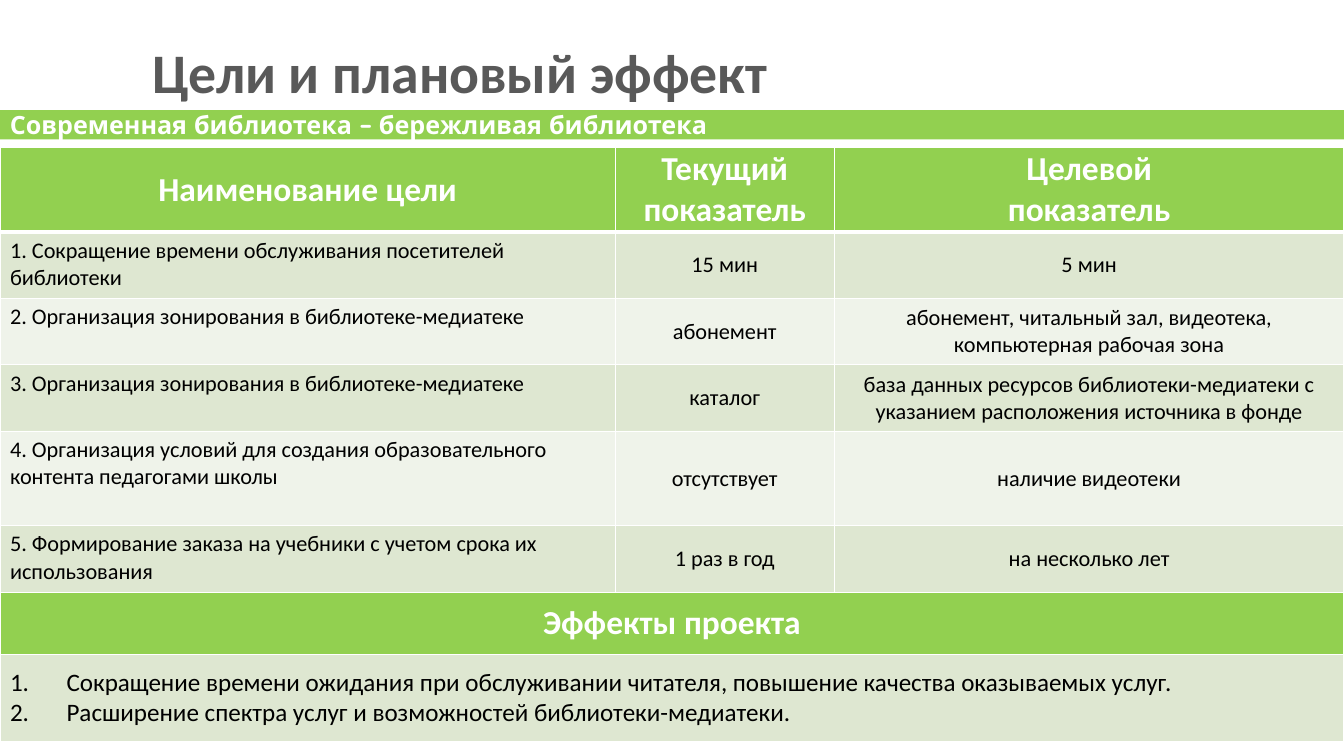
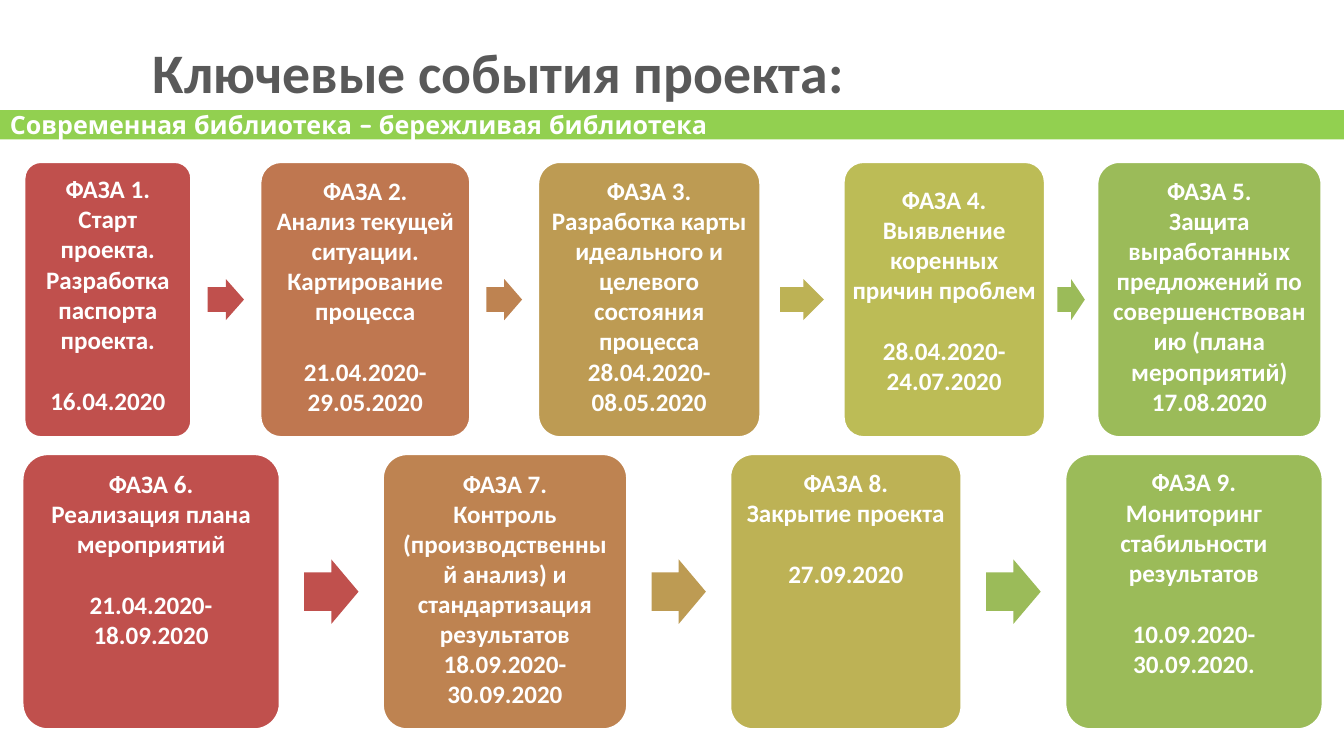
"""Build two slides on a school library project: goals with effects, and key phases."""
from lxml import etree
from pptx import Presentation
from pptx.dml.color import RGBColor
from pptx.enum.shapes import MSO_SHAPE
from pptx.enum.text import MSO_ANCHOR, MSO_AUTO_SIZE, PP_ALIGN
from pptx.oxml.ns import qn
from pptx.util import Cm, Pt

LEFT, CENTER = PP_ALIGN.LEFT, PP_ALIGN.CENTER
TOP, MIDDLE = MSO_ANCHOR.TOP, MSO_ANCHOR.MIDDLE
NO_FIT = MSO_AUTO_SIZE.NONE
RECT, CARD, ARROW = MSO_SHAPE.RECTANGLE, MSO_SHAPE.ROUNDED_RECTANGLE, MSO_SHAPE.RIGHT_ARROW

COLOURS = {
    "white": "FFFFFF", "black": "000000", "title": "595959", "band": "92D050",
    "odd": "DEE7D1", "even": "EFF3EA",
    "red": "C0504D", "rust": "BF7750", "copper": "BE8351", "sand": "BD9B53",
    "straw": "BDB255", "lime": "BCBC56", "green": "9BBB59",
}
WIDTH, HEIGHT = 34.01, 19
BODY_FONT, BAND_FONT = "Calibri", "Quicksand"
BAND_TEXT = "Современная библиотека – бережливая библиотека"

GOALS_TITLE = "Цели и плановый эффект"
HEADINGS = (["Наименование цели"], ["Текущий", "показатель"], ["Целевой", "показатель"])
GOALS = [
    ("1. Сокращение времени обслуживания посетителей библиотеки", "15 мин", "5 мин"),
    ("2. Организация зонирования в библиотеке-медиатеке", "абонемент",
     "абонемент, читальный зал, видеотека, компьютерная рабочая зона"),
    ("3. Организация зонирования в библиотеке-медиатеке", "каталог",
     "база данных ресурсов библиотеки-медиатеки с указанием расположения источника в фонде"),
    ("4. Организация условий для создания образовательного контента педагогами школы",
     "отсутствует", "наличие видеотеки"),
    ("5. Формирование заказа на учебники с учетом срока их использования",
     "1 раз в год", "на несколько лет"),
]
EFFECTS_HEADING = "Эффекты проекта"
EFFECTS = [
    "Сокращение времени ожидания при обслуживании читателя, повышение качества оказываемых услуг.",
    "Расширение спектра услуг и возможностей библиотеки-медиатеки.",
]
COLUMN_WIDTHS = (15.57, 5.54, 12.9)
ROW_HEIGHTS = (2.13, 1.68, 1.68, 1.68, 2.39, 1.68, 1.57, 2.21)

PHASES_TITLE = "Ключевые события проекта:"
CARD_HEIGHT, CARD_INSETS = 6.98, (0.18, 0.18)
PHASE_ROWS = [
    {"top": 4.09, "arrow_height": 1.04, "arrows": ("red", "copper", "straw", "green"), "cards": [
        {"left": 0.61, "width": 4.24, "colour": "red", "gap": 22, "dates": ["16.04.2020"],
         "lines": ["ФАЗА 1.", "Старт проекта. Разработка паспорта проекта."]},
        {"left": 6.58, "width": 5.33, "colour": "rust", "gap": 22,
         "dates": ["21.04.2020-", "29.05.2020"],
         "lines": ["ФАЗА 2.", "Анализ текущей ситуации.", "Картирование процесса"]},
        {"left": 13.61, "width": 5.64, "colour": "sand", "gap": 0,
         "dates": ["28.04.2020-", "08.05.2020"],
         "lines": ["ФАЗА 3.", "Разработка карты идеального и целевого состояния процесса"]},
        {"left": 21.34, "width": 5.11, "colour": "lime", "gap": 22, "insets": (0, 0.43),
         "dates": ["28.04.2020-", "24.07.2020"],
         "lines": ["ФАЗА 4.", "Выявление коренных причин проблем"]},
        {"left": 27.76, "width": 5.69, "colour": "green", "gap": 0, "dates": ["17.08.2020"],
         "lines": ["ФАЗА 5.",
                   "Защита выработанных предложений по совершенствованию (плана мероприятий)"]},
    ]},
    {"top": 11.48, "arrow_height": 1.63, "arrows": ("red", "sand", "green"), "cards": [
        {"left": 0.56, "width": 6.53, "colour": "red", "gap": 22,
         "dates": ["21.04.2020-", "18.09.2020"],
         "lines": ["ФАЗА 6.", "Реализация плана мероприятий"]},
        {"left": 9.68, "width": 6.2, "colour": "copper", "gap": 0,
         "dates": ["18.09.2020-", "30.09.2020"],
         "lines": ["ФАЗА 7.",
                   "Контроль (производственный анализ) и стандартизация результатов"]},
        {"left": 18.47, "width": 5.87, "colour": "straw", "gap": 22, "dates": ["27.09.2020"],
         "lines": ["ФАЗА 8.", "Закрытие проекта"]},
        {"left": 26.95, "width": 6.53, "colour": "green", "gap": 22, "insets": (0.5, 0.14),
         "dates": ["10.09.2020-", "30.09.2020."],
         "lines": ["ФАЗА 9.", "Мониторинг стабильности результатов"]},
    ]},
]


def rgb(name):
    """Return the named colour."""
    return RGBColor.from_string(COLOURS[name])


def write(frame, lines, size, colour="white", bold=True, align=CENTER, font=BODY_FONT):
    """Write one paragraph per line and return the paragraphs."""
    frame.word_wrap = True
    for index, line in enumerate(lines):
        para = frame.paragraphs[0] if index == 0 else frame.add_paragraph()
        para.alignment = align
        span = para.add_run()
        span.text = line
        span.font.name, span.font.size, span.font.bold = font, Pt(size), bold
        span.font.color.rgb = rgb(colour)
    return frame.paragraphs


def add_block(page, kind, left, top, width, height, colour):
    """Add a flat filled shape without an outline."""
    shape = page.shapes.add_shape(kind, Cm(left), Cm(top), Cm(width), Cm(height))
    shape.shadow.inherit = False
    shape.fill.solid()
    shape.fill.fore_color.rgb = rgb(colour)
    shape.line.fill.background()
    return shape


def add_page(deck, heading):
    """Add a slide with the shared title and band."""
    page = deck.slides.add_slide(deck.slide_layouts[5])
    title = page.shapes.title
    title.left, title.top, title.width, title.height = Cm(3.61), Cm(0.84), Cm(25.6), Cm(1.96)
    title.text_frame.auto_size = NO_FIT
    title.text_frame.vertical_anchor = TOP
    write(title.text_frame, [heading], 40, "title", align=LEFT)
    band = add_block(page, RECT, 0, 2.79, WIDTH, 0.74, "band")
    band.text_frame.vertical_anchor = MIDDLE
    write(band.text_frame, [BAND_TEXT], 18, align=LEFT, font=BAND_FONT)
    return page


def set_borders(cell, top, bottom):
    """Draw white cell borders, with the top and bottom widths in points."""
    properties = cell._tc.get_or_add_tcPr()
    for index, (side, points) in enumerate((("L", 1), ("R", 1), ("T", top), ("B", bottom))):
        line = etree.Element(qn(f"a:ln{side}"), w=str(Pt(points)))
        fill = etree.SubElement(line, qn("a:solidFill"))
        etree.SubElement(fill, qn("a:srgbClr"), val=COLOURS["white"])
        properties.insert(index, line)


def number(para):
    """Turn a paragraph into a numbered item with a hanging indent."""
    properties = para._p.get_or_add_pPr()
    properties.set("marL", str(Cm(1.43)))
    properties.set("indent", str(-Cm(1.43)))
    etree.SubElement(properties, qn("a:buAutoNum"), type="arabicPeriod")


def add_goals_table(page):
    """Add the table of goals, followed by the project effects."""
    frame = page.shapes.add_table(len(ROW_HEIGHTS), len(COLUMN_WIDTHS), Cm(0), Cm(3.74),
                                  Cm(sum(COLUMN_WIDTHS)), Cm(sum(ROW_HEIGHTS)))
    table = frame.table
    table.first_row = table.horz_banding = False
    for column, width in zip(table.columns, COLUMN_WIDTHS):
        column.width = Cm(width)
    effects_row = len(GOALS) + 1
    for index, (row, height) in enumerate(zip(table.rows, ROW_HEIGHTS)):
        row.height = Cm(height)
        colour = "band" if index in (0, effects_row) else "odd" if index % 2 else "even"
        for cell in row.cells:
            cell.fill.solid()
            cell.fill.fore_color.rgb = rgb(colour)
            cell.vertical_anchor = MIDDLE
            set_borders(cell, 3 if index == 1 else 1, 3 if index == 0 else 1)
    for cell, lines in zip(table.rows[0].cells, HEADINGS):
        cell.margin_left = cell.margin_right = Cm(0.18)
        cell.margin_top = cell.margin_bottom = Cm(0)
        write(cell.text_frame, lines, 24)
    for index, goal in enumerate(GOALS, 1):
        for column, value in enumerate(goal):
            cell = table.cell(index, column)
            cell.vertical_anchor = MIDDLE if column else TOP
            write(cell.text_frame, [value], 16, "black", False, CENTER if column else LEFT)
    for index in (effects_row, effects_row + 1):
        table.cell(index, 0).merge(table.cell(index, len(COLUMN_WIDTHS) - 1))
    write(table.cell(effects_row, 0).text_frame, [EFFECTS_HEADING], 24)
    effects = table.cell(effects_row + 1, 0).text_frame
    for para in write(effects, EFFECTS, 18, "black", False, LEFT):
        number(para)


def add_card(page, top, phase):
    """Add one phase card with its dates."""
    card = add_block(page, CARD, phase["left"], top, phase["width"], CARD_HEIGHT, phase["colour"])
    card.adjustments[0] = 0.1
    card.line.color.rgb = rgb("white")
    card.line.width = Pt(2)
    frame = card.text_frame
    side, upper = phase.get("insets", CARD_INSETS)
    frame.margin_left = frame.margin_right = Cm(side)
    frame.margin_top, frame.margin_bottom = Cm(upper), Cm(0)
    frame.vertical_anchor = TOP
    paras = write(frame, phase["lines"] + phase["dates"], 18)
    paras[len(phase["lines"])].space_before = Pt(phase["gap"])


def add_phase_row(page, top, arrow_height, arrows, cards):
    """Add a row of cards with an arrow centred in each gap."""
    for phase in cards:
        add_card(page, top, phase)
    arrow_top = top + (CARD_HEIGHT - arrow_height) / 2
    for colour, before, after in zip(arrows, cards, cards[1:]):
        start = before["left"] + before["width"]
        gap = after["left"] - start
        width = 0.53 * gap
        arrow = add_block(page, ARROW, start + (gap - width) / 2, arrow_top,
                          width, arrow_height, colour)
        arrow.adjustments[0], arrow.adjustments[1] = 0.6, 0.5


def main():
    """Build and save the deck."""
    deck = Presentation()
    deck.slide_width, deck.slide_height = Cm(WIDTH), Cm(HEIGHT)
    add_goals_table(add_page(deck, GOALS_TITLE))
    phases_page = add_page(deck, PHASES_TITLE)
    for row in PHASE_ROWS:
        add_phase_row(phases_page, **row)
    deck.save("out.pptx")


if __name__ == "__main__":
    main()
